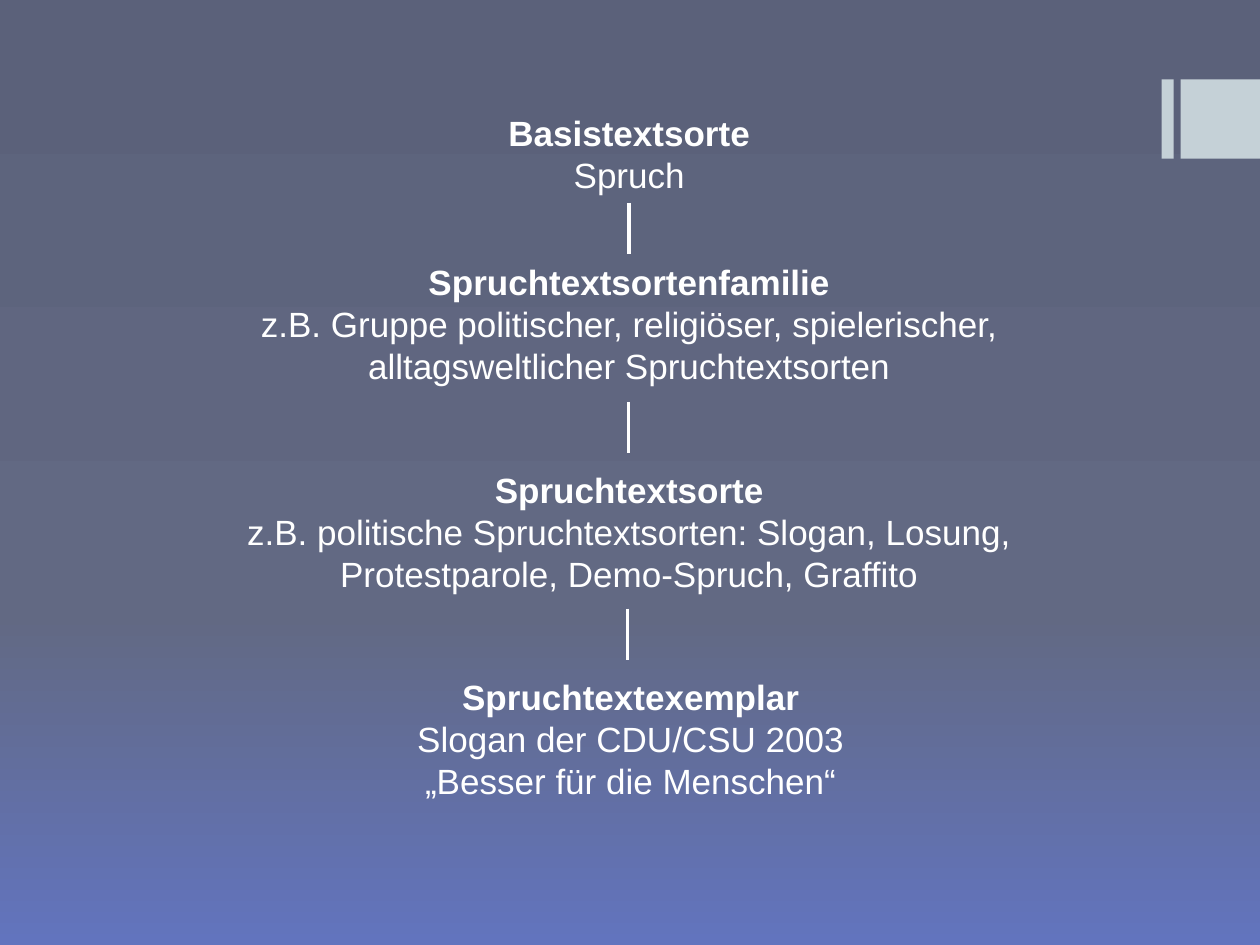
from copy import deepcopy
from dataclasses import dataclass

from pptx import Presentation
from pptx import util as u
from pptx.dml.color import RGBColor
from pptx.enum import shapes, text
from pptx.oxml import ns
from pptx.oxml.xmlchemy import OxmlElement

WHITE = "FFFFFF"
ACCENT = "C5D1D7"
BACKGROUND_STOPS = [(0, "5B617A"), (0.65, "626983"), (1, "6274BE")]
LEVEL_LEFT, LEVEL_WIDTH = 2.69, 19.99
LINK_LENGTH = 1.04


@dataclass
class Level:
    top: float
    height: float
    heading: str
    examples: list[str]
    left: float = LEVEL_LEFT


@dataclass
class Link:
    x: float
    top: float


LEVELS = [
    Level(2.13, 1.96, "Basistextsorte", ["Spruch"]),
    Level(5.13, 2.82, "Spruchtextsortenfamilie",
          ["z.B. Gruppe politischer, religiöser, spielerischer, "
           "alltagsweltlicher Spruchtextsorten"]),
    Level(9.32, 2.82, "Spruchtextsorte",
          ["z.B. politische Spruchtextsorten: Slogan, Losung, "
           "Protestparole, Demo-Spruch, Graffito"]),
    Level(13.49, 2.82, "Spruchtextexemplar",
          ["Slogan der CDU/CSU 2003", "„Besser für die Menschen“"], left=2.72),
]
LINKS = [Link(12.68, 4.09), Link(12.67, 8.1), Link(12.65, 12.27)]


def colour(hex_code: str) -> RGBColor:
    return RGBColor.from_string(hex_code)


def paint_background(slide) -> None:
    fill = slide.background.fill
    fill.gradient()
    fill.gradient_angle = 270
    stop_list = slide.element.find(".//" + ns.qn("a:gsLst"))
    stop_list.insert(1, deepcopy(stop_list[0]))
    for stop, (position, hex_code) in zip(fill.gradient_stops, BACKGROUND_STOPS):
        stop.position = position
        stop.color.rgb = colour(hex_code)


def draw_accent(slide, left: float, width: float) -> None:
    accent = slide.shapes.add_shape(shapes.MSO_SHAPE.RECTANGLE, u.Cm(left),
                                    u.Cm(1.6), u.Cm(width), u.Cm(1.6))
    accent.shadow.inherit = False
    accent.fill.solid()
    accent.fill.fore_color.rgb = colour(ACCENT)
    accent.line.fill.background()


def draw_level(slide, level: Level):
    box = slide.shapes.add_textbox(u.Cm(level.left), u.Cm(level.top),
                                   u.Cm(LEVEL_WIDTH), u.Cm(level.height))
    frame = box.text_frame
    frame.word_wrap = True
    frame.auto_size = text.MSO_AUTO_SIZE.SHAPE_TO_FIT_TEXT
    for index, wording in enumerate([level.heading, *level.examples]):
        paragraph = frame.add_paragraph() if index else frame.paragraphs[0]
        paragraph.alignment = text.PP_ALIGN.CENTER
        run = paragraph.add_run()
        run.text = wording
        run.font.name = "Arial"
        run.font.size = u.Pt(20)
        run.font.bold = index == 0
        run.font.color.rgb = colour(WHITE)
    return box


def draw_link(slide, link: Link):
    line = slide.shapes.add_connector(
        shapes.MSO_CONNECTOR.STRAIGHT, u.Cm(link.x), u.Cm(link.top),
        u.Cm(link.x), u.Cm(link.top + LINK_LENGTH))
    line.line.color.rgb = colour(WHITE)
    line.line.width = u.Pt(2)
    line.element.spPr.append(OxmlElement("a:effectLst"))
    return line


def main() -> None:
    deck = Presentation()
    deck.slide_width, deck.slide_height = u.Cm(25.4), u.Cm(19.05)
    slide = deck.slides.add_slide(deck.slide_layouts[6])
    paint_background(slide)
    draw_accent(slide, 23.42, 0.24)
    draw_accent(slide, 23.8, 1.6)
    boxes = [draw_level(slide, level) for level in LEVELS]
    lines = [draw_link(slide, link) for link in LINKS]
    lines[0].begin_connect(boxes[0], 2)
    lines[0].end_connect(boxes[1], 0)
    deck.save("out.pptx")


if __name__ == "__main__":
    main()
